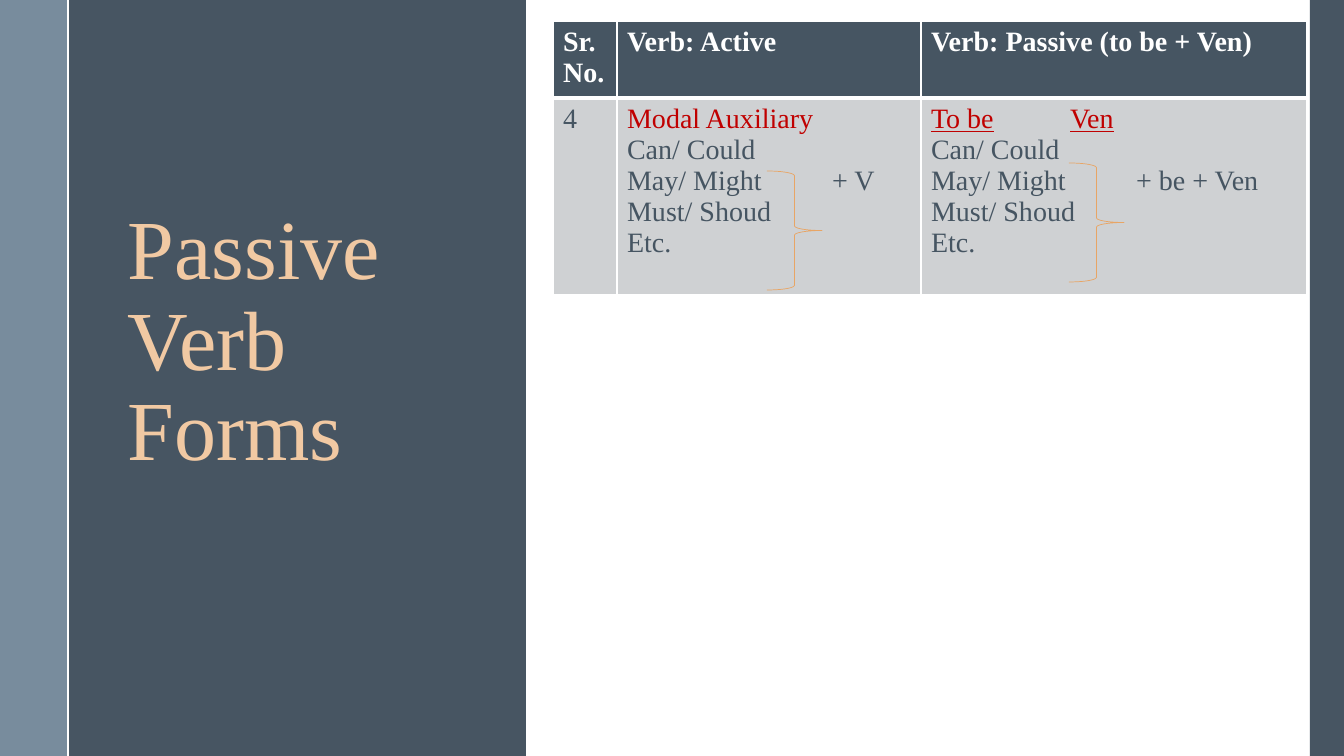
import pptx
import pptx.util
import pptx.dml.color
import pptx.enum.shapes
import pptx.enum.text
import pptx.oxml
import pptx.oxml.ns
import lxml.etree

UNIT = 12192000 / 1344
COLORS = {
    "slate": "475562", "head": "465562", "steel": "6A8093", "white": "FFFFFF",
    "peach": "F1C9A3", "gray": "CFD1D3", "red": "C00000", "orange": "E8A565",
}
FACE = "Times New Roman"
TITLE = {"name": FACE, "size": pptx.util.Pt(60)}
BODY = {"name": FACE, "size": pptx.util.Pt(20), "bold": False}
HEAD = {**BODY, "bold": True}
UNDER = {**BODY, "underline": True}
HEADS = ["Sr. No.", "Verb: Active", "Verb: Passive (to be + Ven)"]
FORMS = [("Modal Auxiliary", "+ V", BODY), ("To be\tVen", "+ be + Ven", UNDER)]
COLS = [64, 304, 386]
ROWS = [72, 196]
BARS = [
    (68, 458, "slate", 100),
    (0, 67, "steel", 90),
    (1310, 34, "slate", 100),
]
BRACES = [(767, 171), (1069, 163)]


def px(num):
    return pptx.util.Emu(round(num * UNIT))


def rgb(name):
    return pptx.dml.color.RGBColor.from_string(COLORS[name])


def paint(fill, name):
    fill.solid()
    fill.fore_color.rgb = rgb(name)


def tag(root, name, **attrs):
    return lxml.etree.SubElement(root, pptx.oxml.ns.qn(name), attrs)


def write(para, text, form, color):
    run = para.add_run()
    run.text = text
    for key, value in form.items():
        setattr(run.font, key, value)
    run.font.color.rgb = rgb(color)


def add_bar(slide, left, width, color, alpha):
    kind = pptx.enum.shapes.MSO_SHAPE.RECTANGLE
    bar = slide.shapes.add_shape(kind, px(left), 0, px(width), px(756))
    bar.shadow.inherit = False
    paint(bar.fill, color)
    bar.line.fill.background()
    if alpha < 100:
        tone = bar.fill._xPr.find(".//" + pptx.oxml.ns.qn("a:srgbClr"))
        tag(tone, "a:alpha", val=str(alpha * 1000))


def add_rule(slide, left):
    kind = pptx.enum.shapes.MSO_CONNECTOR.STRAIGHT
    rule = slide.shapes.add_connector(kind, px(left), 0, px(left), px(756))
    rule.line.color.rgb = rgb("white")
    rule.line.width = pptx.util.Pt(1.5)
    tag(rule._element.spPr, "a:effectLst")


def add_title(slide, text):
    box = slide.shapes.add_textbox(px(118), px(202), px(363), px(479))
    frame = box.text_frame
    frame.word_wrap = True
    para = frame.paragraphs[0]
    para.line_spacing = 0.9
    para.space_before = pptx.util.Pt(14)
    write(para, text, TITLE, "peach")


def add_brace(slide, left, top):
    kind = pptx.enum.shapes.MSO_SHAPE.RIGHT_BRACE
    brace = slide.shapes.add_shape(kind, px(left), px(top), px(55), px(119))
    brace.shadow.inherit = False
    brace.fill.background()
    brace.line.color.rgb = rgb("orange")
    brace.line.width = pptx.util.Pt(0.5)


def add_edges(cell, row):
    props = cell._tc.get_or_add_tcPr()
    thick = {"L": 1, "R": 1, "T": 1 if row == 0 else 3, "B": 3 if row == 0 else 1}
    for side, width in thick.items():
        line = tag(props, "a:ln" + side, w=str(pptx.util.Pt(width)))
        tag(tag(line, "a:solidFill"), "a:srgbClr", val=COLORS["white"])


def fill_cell(table, row, col, lines):
    cell = table.cell(row, col)
    add_edges(cell, row)
    paint(cell.fill, "head" if row == 0 else "gray")
    frame = cell.text_frame
    for num, (text, form, color, stop) in enumerate(lines):
        para = frame.add_paragraph() if num else frame.paragraphs[0]
        if stop:
            tabs = tag(para._p.get_or_add_pPr(), "a:tabLst")
            tag(tabs, "a:tab", pos=str(px(stop)), algn="l")
        write(para, text, form, color)


def list_verbs(title, tail, form):
    verbs = ["Can/ Could", "May/ Might\t" + tail, "Must/ Shoud", "Etc."]
    lines = [(title, form, "red", 139 if "\t" in title else 0)]
    return lines + [(verb, BODY, "head", 205 if "\t" in verb else 0) for verb in verbs]


def add_grid(slide):
    frame = slide.shapes.add_table(2, 3, px(553), px(21), px(sum(COLS)), px(sum(ROWS)))
    table = frame.table
    for col, width in zip(table.columns, COLS):
        col.width = px(width)
    for row, height in zip(table.rows, ROWS):
        row.height = px(height)
    cells = [
        [[(text, HEAD, "white", 0)] for text in HEADS],
        [[("4", BODY, "head", 0)]] + [list_verbs(*form) for form in FORMS],
    ]
    for row, items in enumerate(cells):
        for col, lines in enumerate(items):
            fill_cell(table, row, col, lines)


def main():
    deck = pptx.Presentation()
    deck.slide_width = px(1344)
    deck.slide_height = px(756)
    slide = deck.slides.add_slide(deck.slide_layouts[6])
    paint(slide.background.fill, "white")
    for bar in BARS:
        add_bar(slide, *bar)
    add_rule(slide, 68)
    add_title(slide, "Passive Verb Forms")
    add_grid(slide)
    for brace in BRACES:
        add_brace(slide, *brace)
    deck.save("out.pptx")


if __name__ == "__main__":
    main()
